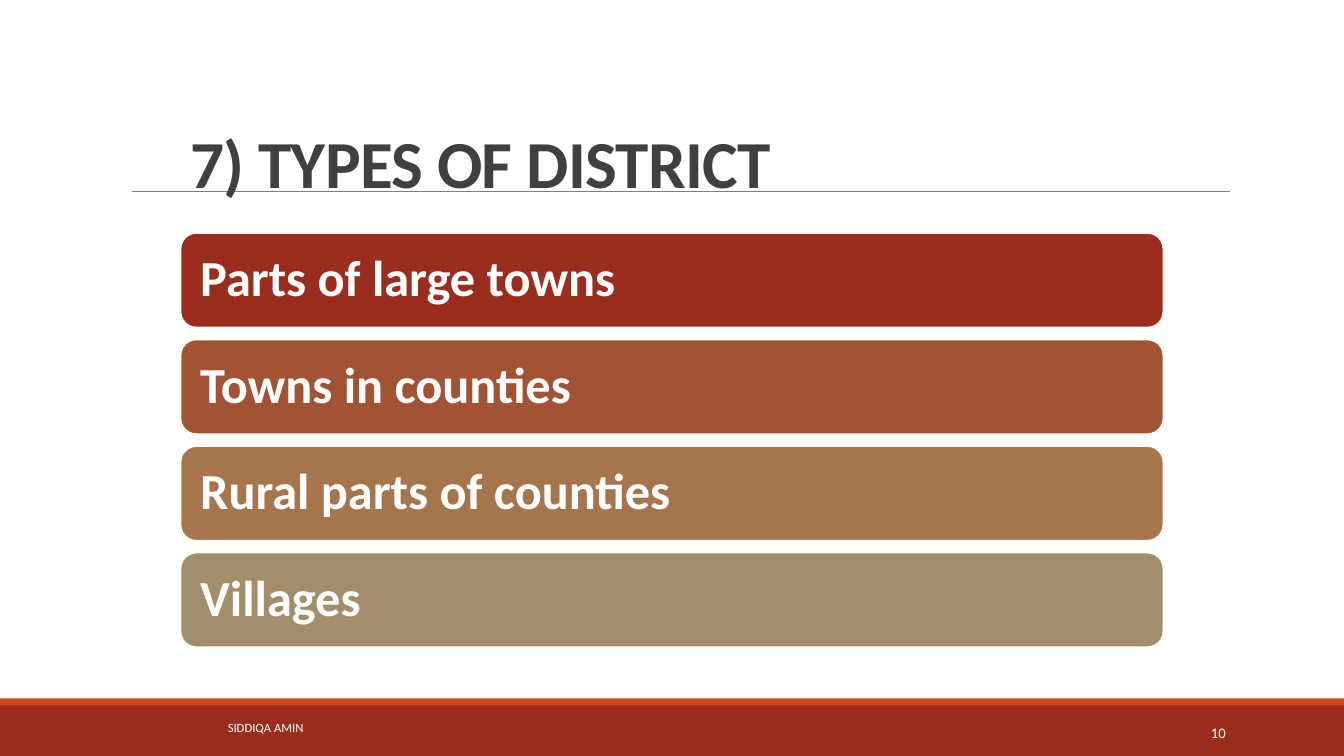
from lxml import etree
from pptx import Presentation
from pptx.dml.color import RGBColor
from pptx.enum import shapes, text
from pptx.oxml import ns
from pptx.util import Cm, Pt

WHITE = RGBColor(0xFF, 0xFF, 0xFF)
DARK = RGBColor(0x40, 0x40, 0x40)
GRAY = RGBColor(0x80, 0x80, 0x80)
RED = RGBColor(0x9B, 0x2D, 0x1F)
ORANGE = RGBColor(0xD3, 0x48, 0x17)
RUST = RGBColor(0xA2, 0x53, 0x33)
BROWN = RGBColor(0xA6, 0x75, 0x4B)
KHAKI = RGBColor(0xA2, 0x8E, 0x6A)

WIDTH, HEIGHT = 33.87, 19.05
TYPES = [
    ("Parts of large towns", RED),
    ("Towns in counties", RUST),
    ("Rural parts of counties", BROWN),
    ("Villages", KHAKI),
]


def write(shape, words, size, color=WHITE, bold=False, align="LEFT", anchor="MIDDLE", spacing=1.0):
    frame = shape.text_frame
    frame.word_wrap = True
    frame.vertical_anchor = getattr(text.MSO_ANCHOR, anchor)
    par = frame.paragraphs[0]
    par.alignment = getattr(text.PP_ALIGN, align)
    par.line_spacing = spacing
    run = par.add_run()
    run.text = words
    run.font.color.rgb = color
    for key, value in {"name": "Calibri", "size": Pt(size), "bold": bold}.items():
        setattr(run.font, key, value)
    return run


def block(slide, kind, box, color):
    shape = slide.shapes.add_shape(kind, *map(Cm, box))
    shape.shadow.inherit = False
    shape.fill.solid()
    shape.fill.fore_color.rgb = color
    shape.line.fill.background()
    return shape


def label(slide, box, words, size, **style):
    return write(slide.shapes.add_textbox(*map(Cm, box)), words, size, **style)


def footer(slide, left, top, width, height):
    """Two-tone band with the author and the page number."""
    rect = shapes.MSO_SHAPE.RECTANGLE
    strip = 0.17
    block(slide, rect, (left, top + strip, width, height - strip), RED)
    block(slide, rect, (left, top, width, strip), ORANGE)
    label(slide, (left, top + 0.23, 13.39, 1.02), "SIDDIQA AMIN", 9, align="CENTER")
    label(slide, (left + 27.51, top + 0.34, 3.63, 1.02), "10", 10.5, align="RIGHT")


def heading(slide, left, top, width, height):
    """Title with a rule that runs past both of its sides."""
    level = top + height - 0.38
    rule = slide.shapes.add_connector(
        shapes.MSO_CONNECTOR.STRAIGHT,
        Cm(left - 1.22), Cm(level), Cm(left + width + 1.67), Cm(level))
    rule.line.color.rgb = GRAY
    rule.line.width = Pt(0.5)
    etree.SubElement(rule._element.spPr, ns.qn("a:effectLst"))
    run = label(slide, (left, top, width, height), "7) TYPES OF DISTRICT", 48,
                color=DARK, bold=True, anchor="BOTTOM", spacing=0.85)
    run.font._element.set("spc", "-50")


def bars(slide, left, top, width, height, gap=0.3):
    """One rounded bar for each type, stacked to fill the box."""
    tall = (height - gap * (len(TYPES) - 1)) / len(TYPES)
    for row, (words, color) in enumerate(TYPES):
        spot = (left, top + row * (tall + gap), width, tall)
        bar = block(slide, shapes.MSO_SHAPE.ROUNDED_RECTANGLE, spot, color)
        bar.line.color.rgb = WHITE
        bar.line.width = Pt(1.25)
        # The rounded outline already adds 0.12 cm of inset
        bar.text_frame.margin_left = Cm(0.38)
        write(bar, words, 36, bold=True, spacing=0.9)


def main():
    deck = Presentation()
    deck.slide_width, deck.slide_height = Cm(WIDTH), Cm(HEIGHT)
    slide = deck.slides.add_slide(deck.slide_layouts[6])
    footer(slide, 0, 17.6, WIDTH, 1.45)
    heading(slide, 4.55, 1.65, 24.77, 3.56)
    bars(slide, 4.55, 5.87, 24.77, 10.44)
    deck.save("out.pptx")


if __name__ == "__main__":
    main()
